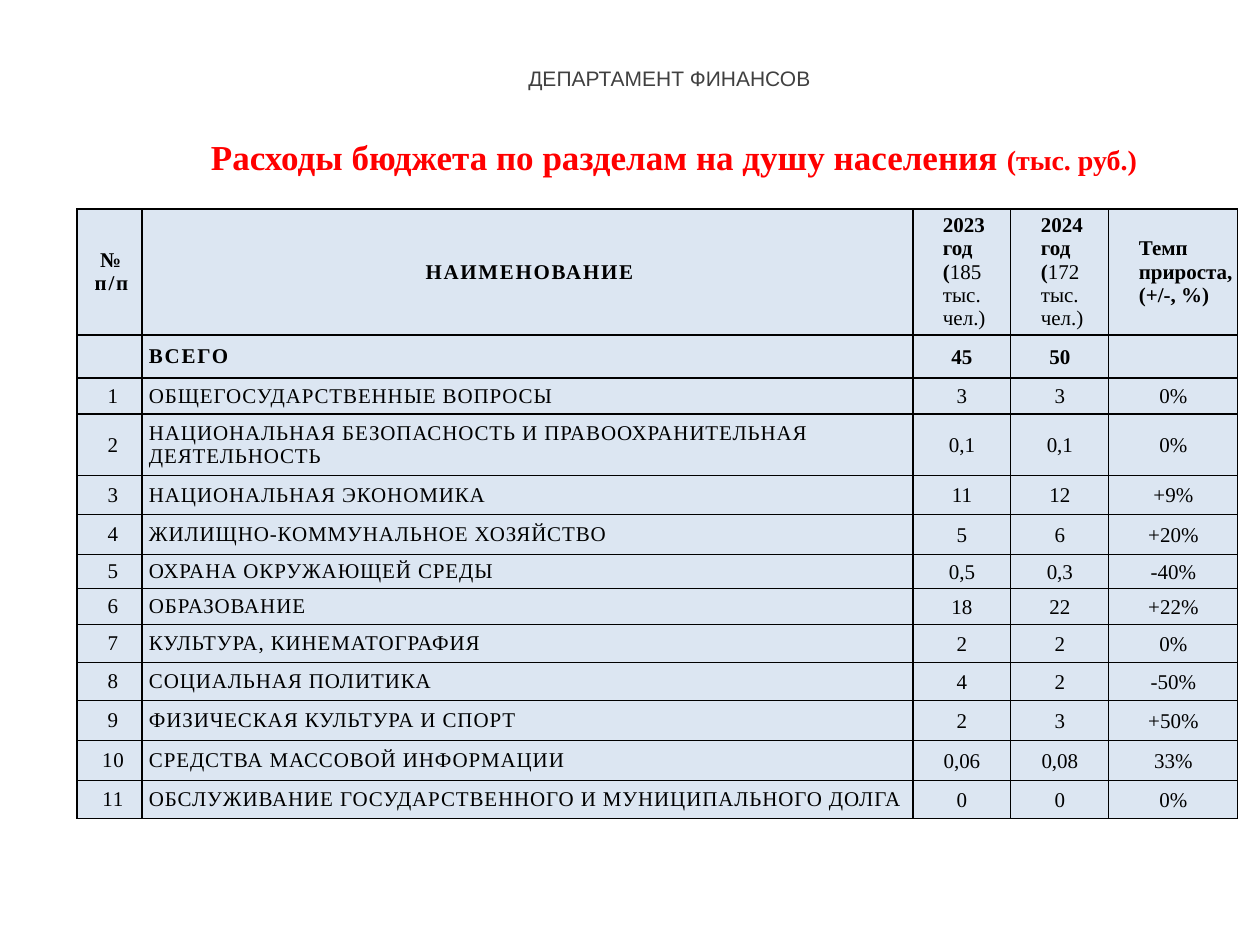
from lxml.etree import SubElement
from pptx import Presentation
from pptx.dml.color import RGBColor
from pptx.enum.text import MSO_ANCHOR, MSO_AUTO_SIZE, PP_ALIGN
from pptx.oxml.ns import qn
from pptx.util import Pt

EMU_PER_PX = 914400 / 126
BLACK = RGBColor(0x00, 0x00, 0x00)
RED = RGBColor(0xFF, 0x00, 0x00)
GREY = RGBColor(0x40, 0x40, 0x40)
PALE_BLUE = RGBColor(0xDC, 0xE6, 0xF2)
SERIF = "Times New Roman"

COLUMN_WIDTHS = [65, 771, 98, 98, 129]
ROW_HEIGHTS = [87, 43, 36, 62, 39, 40, 34, 36, 38, 38, 40, 40, 38]
HEADINGS = [
    [("№ п/п", True)],
    [("НАИМЕНОВАНИЕ", True)],
    [("2023 год (", True), ("185 тыс. чел.)", False)],
    [("2024 год (", True), ("172 тыс. чел.)", False)],
    [("Темп прироста, (+/-, %)", True)],
]
TOTAL = ("", "ВСЕГО", "45", "50", "")
SECTIONS = [
    ("ОБЩЕГОСУДАРСТВЕННЫЕ ВОПРОСЫ", "3", "3", "0%"),
    ("НАЦИОНАЛЬНАЯ БЕЗОПАСНОСТЬ И ПРАВООХРАНИТЕЛЬНАЯ ДЕЯТЕЛЬНОСТЬ", "0,1", "0,1", "0%"),
    ("НАЦИОНАЛЬНАЯ ЭКОНОМИКА", "11", "12", "+9%"),
    ("ЖИЛИЩНО-КОММУНАЛЬНОЕ ХОЗЯЙСТВО", "5", "6", "+20%"),
    ("ОХРАНА ОКРУЖАЮЩЕЙ СРЕДЫ", "0,5", "0,3", "-40%"),
    ("ОБРАЗОВАНИЕ", "18", "22", "+22%"),
    ("КУЛЬТУРА, КИНЕМАТОГРАФИЯ", "2", "2", "0%"),
    ("СОЦИАЛЬНАЯ ПОЛИТИКА", "4", "2", "-50%"),
    ("ФИЗИЧЕСКАЯ КУЛЬТУРА И СПОРТ", "2", "3", "+50%"),
    ("СРЕДСТВА МАССОВОЙ ИНФОРМАЦИИ", "0,06", "0,08", "33%"),
    ("ОБСЛУЖИВАНИЕ ГОСУДАРСТВЕННОГО И МУНИЦИПАЛЬНОГО ДОЛГА", "0", "0", "0%"),
]


def px(length):
    return round(length * EMU_PER_PX)


def set_font(font, name, size, color, bold=None):
    font.name = name
    font.size = Pt(size)
    font.color.rgb = color
    font.bold = bold


def add_title(slide):
    title = slide.shapes.title
    title.left, title.top, title.width, title.height = map(px, (154, 129, 1040, 55))
    frame = title.text_frame
    frame.word_wrap = True
    frame.auto_size = MSO_AUTO_SIZE.SHAPE_TO_FIT_TEXT
    frame.vertical_anchor = MSO_ANCHOR.TOP
    heading = frame.paragraphs[0]
    heading.alignment = PP_ALIGN.CENTER
    for text, size in (("Расходы бюджета по разделам на душу населения ", 20),
                       ("(тыс. руб.)", 16)):
        run = heading.add_run()
        run.text = text
        set_font(run.font, SERIF, size, RED, True)


def add_department(slide):
    department = slide.shapes.add_textbox(*map(px, (412, 49, 515, 59)))
    frame = department.text_frame
    frame.word_wrap = True
    frame.vertical_anchor = MSO_ANCHOR.MIDDLE
    label = frame.paragraphs[0]
    label.text = "ДЕПАРТАМЕНТ ФИНАНСОВ"
    label.alignment = PP_ALIGN.CENTER
    set_font(label.font, "Arial", 12, GREY)


def style_cell(cell, inset):
    """Border, fill and anchor a cell; inset applies to all sides but the bottom."""
    cell.margin_left = cell.margin_top = cell.margin_right = px(inset)
    cell.margin_bottom = 0
    cell.vertical_anchor = MSO_ANCHOR.MIDDLE
    properties = cell._tc.get_or_add_tcPr()
    for side in ("a:lnL", "a:lnR", "a:lnT", "a:lnB"):
        border = SubElement(properties, qn(side), w=str(Pt(0.75)))
        fill = SubElement(border, qn("a:solidFill"))
        SubElement(fill, qn("a:srgbClr"), val=str(BLACK))
    cell.fill.solid()
    cell.fill.fore_color.rgb = PALE_BLUE


def write_cell(cell, runs, centred, indent, spacing):
    """Write (text, bold) runs; indent is in px, spacing in hundredths of a point."""
    paragraph = cell.text_frame.paragraphs[0]
    paragraph.alignment = PP_ALIGN.CENTER if centred else PP_ALIGN.LEFT
    properties = paragraph._p.get_or_add_pPr()
    properties.set("marL", str(px(indent)))
    properties.set("indent", "0")
    set_font(paragraph.font, SERIF, 12, BLACK)
    for text, bold in runs:
        run = paragraph.add_run()
        run.text = text
        run.font.bold = bold
        run.font._element.set("spc", str(spacing))


def fill_header(table):
    for column, runs in enumerate(HEADINGS):
        cell = table.cell(0, column)
        style_cell(cell, 0)
        is_label = column < 2
        write_cell(cell, runs, is_label, 4 if is_label else 30, 100 if is_label else 0)


def fill_row(table, row, values, bold, spacing):
    for column, value in enumerate(values):
        cell = table.cell(row, column)
        is_label = column < 2
        style_cell(cell, 0 if is_label else 1)
        if value:
            write_cell(cell, [(value, bold)], column != 1,
                       7 if is_label else 0, spacing if is_label else 0)


def add_budget_table(slide):
    table = slide.shapes.add_table(
        len(ROW_HEIGHTS), len(COLUMN_WIDTHS), px(77), px(209),
        px(sum(COLUMN_WIDTHS)), px(sum(ROW_HEIGHTS))).table
    table.horz_banding = False
    table.first_row = False
    for column, width in zip(table.columns, COLUMN_WIDTHS):
        column.width = px(width)
    for row, height in zip(table.rows, ROW_HEIGHTS):
        row.height = px(height)
    fill_header(table)
    fill_row(table, 1, TOTAL, True, 100)
    for number, section in enumerate(SECTIONS, 1):
        fill_row(table, number + 1, (str(number), *section), False, 50)


def main():
    presentation = Presentation()
    presentation.slide_width = px(1260)
    presentation.slide_height = px(945)
    slide = presentation.slides.add_slide(presentation.slide_layouts[5])
    add_department(slide)
    add_budget_table(slide)
    add_title(slide)
    presentation.save("out.pptx")


if __name__ == "__main__":
    main()
